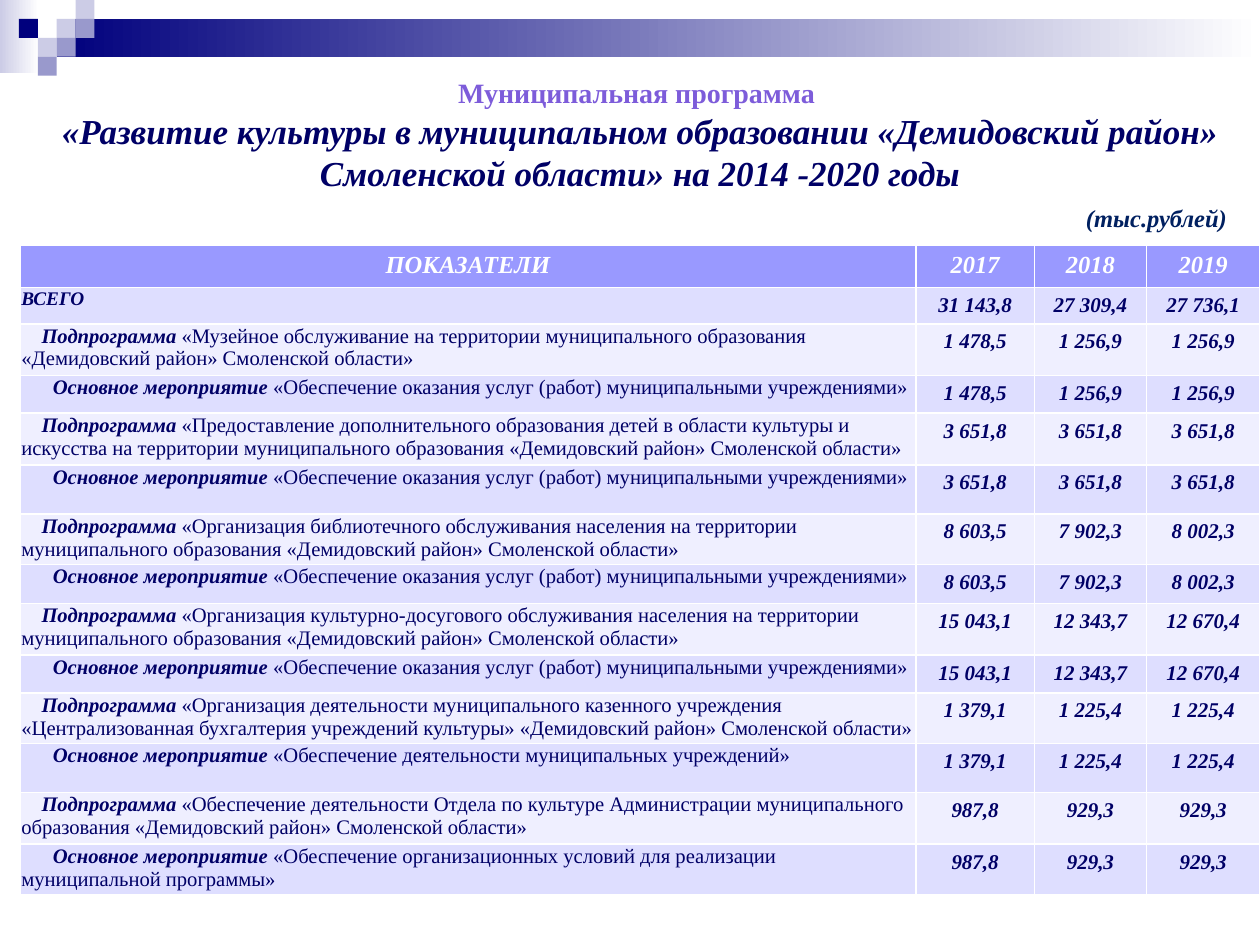
from pptx import Presentation
from pptx.dml.color import RGBColor
from pptx.enum.shapes import MSO_SHAPE
from pptx.enum.text import MSO_ANCHOR, MSO_AUTO_SIZE, PP_ALIGN
from pptx.util import Inches, Pt

RECT = MSO_SHAPE.RECTANGLE
TOP = MSO_ANCHOR.TOP
NO_FIT = MSO_AUTO_SIZE.NONE
LEFT, CENTER = PP_ALIGN.LEFT, PP_ALIGN.CENTER
WHITE = RGBColor(0xFF, 0xFF, 0xFF)
NAVY = RGBColor(0x00, 0x00, 0x7D)
INK = RGBColor(0x00, 0x00, 0x66)
UNIT_INK = RGBColor(0x00, 0x20, 0x60)
VIOLET = RGBColor(0x7D, 0x5C, 0xDA)
PALE = RGBColor(0xCC, 0xCC, 0xE6)
MID = RGBColor(0x99, 0x99, 0xCC)
HEADER = RGBColor(0x99, 0x99, 0xFF)
BANDS = [RGBColor(0xEF, 0xEF, 0xFF), RGBColor(0xDE, 0xDE, 0xFF)]
FONT = "Times New Roman"
SQ = 0.15


def add_run(p, text, size=12, color=INK, bold=True, italic=True, align=LEFT):
    p.alignment = align
    r = p.add_run()
    r.text = text
    r.font.name = FONT
    r.font.size = Pt(size)
    r.font.bold = bold
    r.font.italic = italic
    r.font.color.rgb = color


def add_rect(x, y, w, h, color, fade=False):
    sp = s.shapes.add_shape(RECT, Inches(x), Inches(y), Inches(w), Inches(h))
    sp.shadow.inherit = False
    sp.line.fill.background()
    if fade:
        sp.fill.gradient()
        sp.fill.gradient_angle = 0
        for stop, rgb, pos in zip(sp.fill.gradient_stops, (color, WHITE), (0, 1)):
            stop.color.rgb = rgb
            stop.position = pos
    else:
        sp.fill.solid()
        sp.fill.fore_color.rgb = color


prs = Presentation()
prs.slide_width, prs.slide_height = Inches(10), Inches(7.5)
s = prs.slides.add_slide(prs.slide_layouts[5])

add_rect(0, 0, 0.31, 0.58, PALE, fade=True)
add_rect(3 * SQ, SQ, 10 - 3 * SQ, 2 * SQ, NAVY, fade=True)
squares = [(3, 1, PALE), (4, 0, PALE), (4, 1, MID), (2, 2, PALE),
           (1, 1, NAVY), (3, 2, MID), (2, 3, MID)]
for col, row, color in squares:
    add_rect(col * SQ, row * SQ, SQ, SQ, color)

title = s.shapes.title
title.left, title.top = Inches(0.39), Inches(0.55)
title.width, title.height = Inches(9.38), Inches(1.04)
tf = title.text_frame
tf.auto_size = NO_FIT
tf.vertical_anchor = TOP
tf.margin_left = tf.margin_right = Inches(0.08)
add_run(tf.paragraphs[0], "Муниципальная программа ", size=16, color=VIOLET,
        italic=False, align=CENTER)
add_run(tf.add_paragraph(),
        "«Развитие культуры в муниципальном образовании «Демидовский район» "
        "Смоленской области» на 2014 -2020 годы", size=20, align=CENTER)

SUB, EVENT = "Подпрограмма ", "Основное мероприятие "
INDENTS = {SUB: 0.16, EVENT: 0.25}
SERVICES = "«Обеспечение оказания услуг (работ) муниципальными учреждениями»"
DISTRICT = "«Демидовский район» Смоленской области»"
MUNICIPAL = "муниципального образования " + DISTRICT
museum = ["1 478,5", "1 256,9", "1 256,9"]
school = ["3 651,8"] * 3
library = ["8 603,5", "7 902,3", "8 002,3"]
leisure = ["15 043,1", "12 343,7", "12 670,4"]
accounting = ["1 379,1", "1 225,4", "1 225,4"]
office = ["987,8", "929,3", "929,3"]
rows = [
    (0.41, SUB, "«Музейное обслуживание на территории " + MUNICIPAL, museum),
    (0.3, EVENT, SERVICES, museum),
    (0.41, SUB, "«Предоставление дополнительного образования детей в области "
     "культуры и искусства на территории " + MUNICIPAL, school),
    (0.39, EVENT, SERVICES, school),
    (0.4, SUB, "«Организация библиотечного обслуживания населения на территории "
     + MUNICIPAL, library),
    (0.31, EVENT, SERVICES, library),
    (0.41, SUB, "«Организация культурно-досугового обслуживания населения на "
     "территории " + MUNICIPAL, leisure),
    (0.3, EVENT, SERVICES, leisure),
    (0.4, SUB, "«Организация деятельности муниципального казенного учреждения "
     "«Централизованная бухгалтерия учреждений культуры» " + DISTRICT, accounting),
    (0.39, EVENT, "«Обеспечение деятельности муниципальных учреждений»", accounting),
    (0.41, SUB, "«Обеспечение деятельности Отдела по культуре Администрации "
     + MUNICIPAL, office),
    (0.4, EVENT, "«Обеспечение организационных условий для реализации "
     "муниципальной программы»", office),
]
heights = [0.33, 0.29] + [row[0] for row in rows]
widths = [7.11, 0.94, 0.89, 0.9]
table = s.shapes.add_table(len(heights), len(widths), Inches(0.16), Inches(1.95),
                           Inches(sum(widths)), Inches(sum(heights))).table
for col, width in zip(table.columns, widths):
    col.width = Inches(width)
for row, height in zip(table.rows, heights):
    row.height = Inches(height)

for cell, text in zip(table.rows[0].cells, ["ПОКАЗАТЕЛИ", "2017", "2018", "2019"]):
    cell.fill.solid()
    cell.fill.fore_color.rgb = HEADER
    add_run(cell.text_frame.paragraphs[0], text, size=14, color=WHITE, align=CENTER)

total = (0.29, "ВСЕГО", "", ["31 143,8", "27 309,4", "27 736,1"])
for i, (height, kind, name, values) in enumerate([total] + rows, 1):
    cells = list(table.rows[i].cells)
    for cell in cells:
        cell.fill.solid()
        cell.fill.fore_color.rgb = BANDS[i % 2]
    label = cells[0]
    label.margin_left = label.margin_right = label.margin_top = Inches(0.01)
    label.margin_bottom = 0
    p = label.text_frame.paragraphs[0]
    add_run(p, kind, size=11.8 if name else 11)
    if name:
        p._p.get_or_add_pPr().set("indent", str(Inches(INDENTS[kind])))
        add_run(p, name, size=11.8, bold=False, italic=False)
    for cell, value in zip(cells[1:], values):
        add_run(cell.text_frame.paragraphs[0], value, align=CENTER)

sp = s.shapes.add_textbox(Inches(8.52), Inches(1.56), Inches(1.33), Inches(0.34))
add_run(sp.text_frame.paragraphs[0], "(тыс.рублей)", size=14, color=UNIT_INK)

prs.save("out.pptx")
